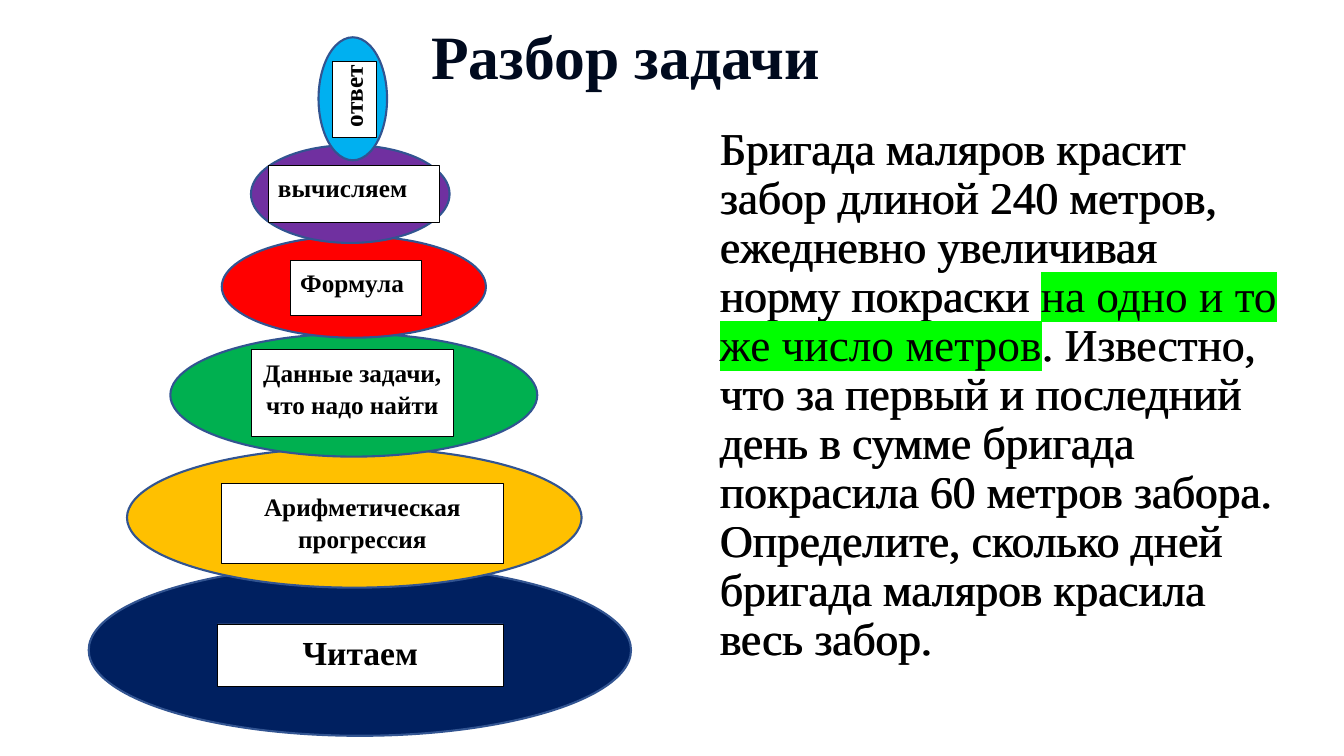
from lxml import etree
from pptx import Presentation
from pptx import util as u
from pptx.dml.color import RGBColor
from pptx.enum import shapes, text
from pptx.oxml.ns import qn

COLUMNS, ROWS = 133.33, 75
CELL = u.Inches(0.1)
FONT = "Times New Roman"
CENTER, LEFT = text.PP_ALIGN.CENTER, text.PP_ALIGN.LEFT

# ellipse colour, ellipse box, label, label box, size, alignment, space after
STEPS = [
    ("002060", (8.8, 56, 53.8, 17), "Читаем", (21.6, 61.9, 28.3, 6.2), 24, CENTER, 8),
    ("FFC000", (12.6, 44.4, 45.1, 13.9), "Арифметическая прогрессия",
     (22, 48, 27.9, 7.9), 18, CENTER, 8),
    ("00B050", (16.9, 33.1, 36.4, 12.2), "Данные задачи, что надо найти",
     (24.9, 34.7, 20.1, 8.6), 18, CENTER, 0),
    ("FF0000", (22, 23.4, 26.2, 10.1), "Формула", (28.8, 25.8, 13, 5.5), 18, LEFT, 8),
    ("7030A0", (24.9, 14.4, 19.7, 9.7), "вычисляем", (26.6, 16.4, 17, 5.7), 18, LEFT, 8),
]
ANSWER = ("00B0F0", (31.6, 3.7, 6.8, 12.2), "ответ", (33, 6.1, 4.3, 7.5), 18, LEFT, 0)

PROBLEM = (
    "Бригада маляров красит забор длиной 240 метров, ежедневно увеличивая норму покраски ",
    "на одно и то же число метров",
    ". Известно, что за первый и последний день в сумме бригада покрасила 60 метров забора. "
    "Определите, сколько дней бригада маляров красила весь забор.",
)


def color(hex_code):
    return RGBColor.from_string(hex_code)


def cells(box):
    return [int(value * CELL) for value in box]


def style(paragraph, size, hex_code, bold=False):
    font = paragraph.font
    font.name, font.size, font.bold = FONT, u.Pt(size), bold
    font.color.rgb = color(hex_code)


def add_outlined(group, preset, box, fill, line, width):
    shape = group.shapes.add_shape(preset, *cells(box))
    shape.shadow.inherit = False
    shape.fill.solid()
    shape.fill.fore_color.rgb = color(fill)
    shape.line.color.rgb = color(line)
    shape.line.width = u.Pt(width)
    return shape


def turn_upright(frame):
    """Makes the text read upwards on one unbroken line with tight margins."""
    frame._txBody.bodyPr.set("vert", "vert270")
    frame.word_wrap = False
    frame.margin_left, frame.margin_top, frame.margin_right, frame.margin_bottom = cells(
        (0.5, 0.9, 0, 0.5))


def add_step(slide, fill, oval, wording, label_box, size, align, after, upright=False):
    """Adds one pyramid tier: an ellipse grouped with its white label."""
    tier = slide.shapes.add_group_shape()
    add_outlined(tier, shapes.MSO_SHAPE.OVAL, oval, fill, "325491", 1.5)
    label = add_outlined(tier, shapes.MSO_SHAPE.RECTANGLE, label_box, "FFFFFF", "000000", 0.5)
    frame = label.text_frame
    frame.word_wrap = True
    frame.vertical_anchor = text.MSO_ANCHOR.TOP
    if upright:
        turn_upright(frame)
    paragraph = frame.paragraphs[0]
    paragraph.text = wording
    paragraph.alignment = align
    paragraph.line_spacing = 1 if upright else 1.07
    paragraph.space_after = u.Pt(after)
    style(paragraph, size, "000000", bold=True)


def add_heading(slide, wording, box):
    frame = slide.shapes.add_textbox(*cells(box)).text_frame
    frame.word_wrap = False
    frame.auto_size = text.MSO_AUTO_SIZE.SHAPE_TO_FIT_TEXT
    frame.paragraphs[0].text = wording
    style(frame.paragraphs[0], 44, "000A1E", bold=True)


def highlight(run, hex_code):
    mark = etree.SubElement(run._r.get_or_add_rPr(), qn("a:highlight"))
    etree.SubElement(mark, qn("a:srgbClr")).set("val", hex_code)


def add_problem(slide, box, marked):
    frame = slide.shapes.add_textbox(*cells(box)).text_frame
    frame.word_wrap = True
    frame.vertical_anchor = text.MSO_ANCHOR.MIDDLE
    paragraph = frame.paragraphs[0]
    paragraph.line_spacing = 0.9
    style(paragraph, 32.4, "000000")
    if not marked:
        paragraph.add_run().text = "".join(PROBLEM)
        return
    for part in PROBLEM:
        paragraph.add_run().text = part
    highlight(paragraph.runs[1], "00FF00")


def main():
    deck = Presentation()
    deck.slide_width, deck.slide_height = cells((COLUMNS, ROWS))
    slide = deck.slides.add_slide(deck.slide_layouts[6])
    add_problem(slide, (70.5, 11.8, 57.8, 54.9), marked=False)
    add_heading(slide, "Разбор задачи", (41.8, 1.3, 42.5, 8.4))
    for step in STEPS:
        add_step(slide, *step)
    add_step(slide, *ANSWER, upright=True)
    add_problem(slide, (70.4, 11.8, 57.8, 54.9), marked=True)
    deck.save("out.pptx")


if __name__ == "__main__":
    main()
